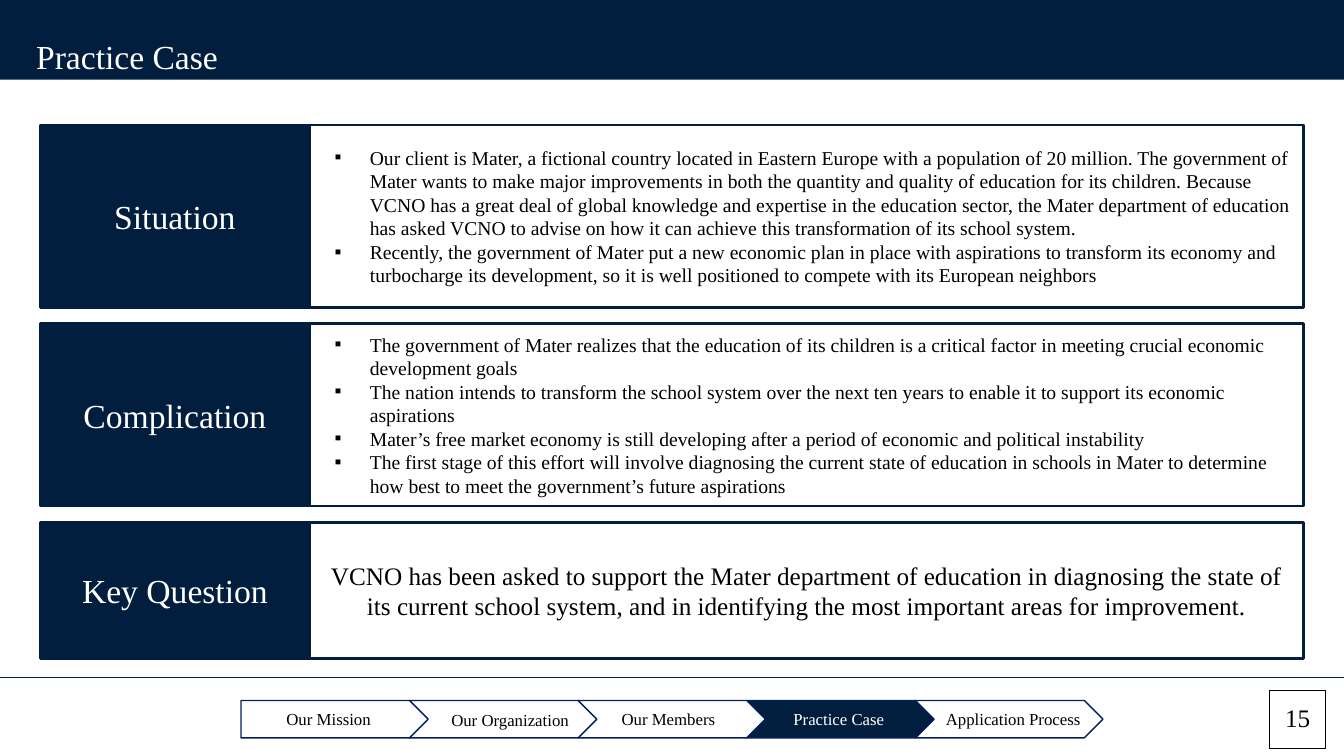
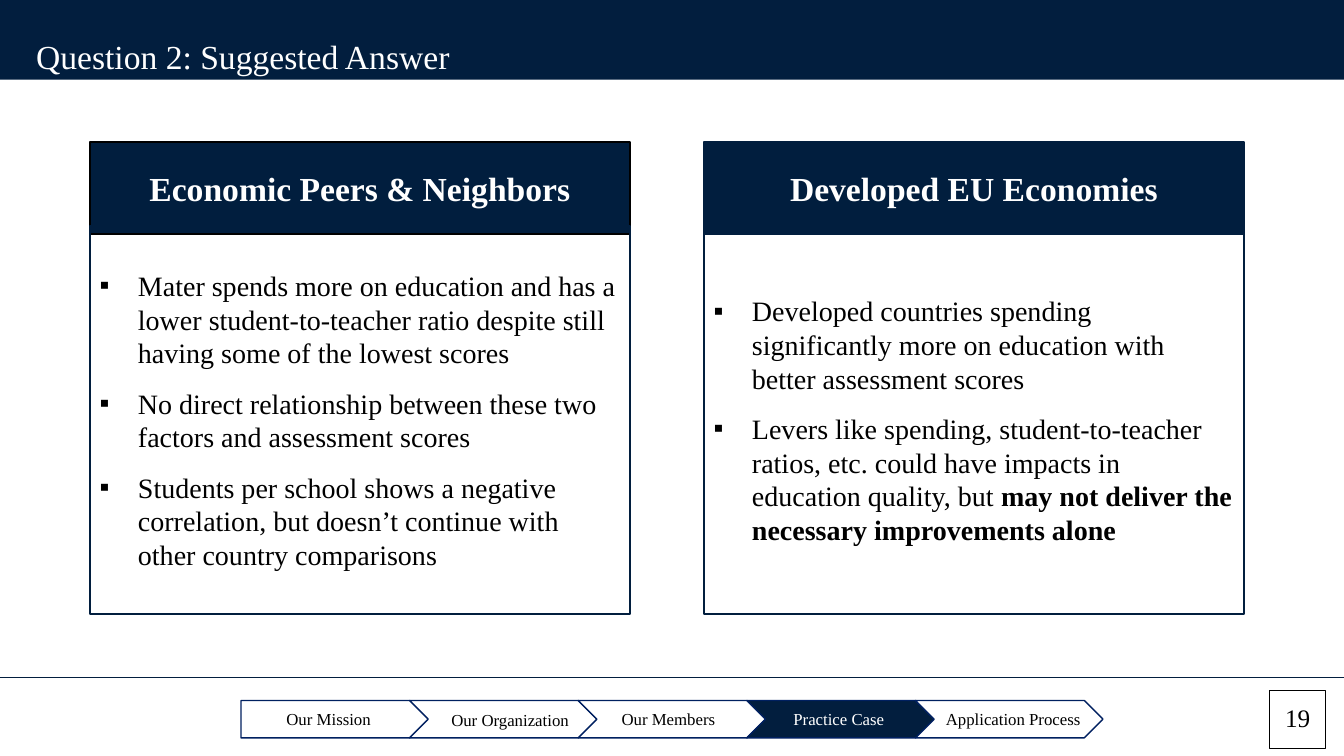
from dataclasses import dataclass

import lxml.etree
import pptx
import pptx.dml.color
import pptx.enum.shapes
import pptx.enum.text
import pptx.oxml.ns
import pptx.util

Inches = pptx.util.Inches
ShapeKind = pptx.enum.shapes.MSO_SHAPE
Align = pptx.enum.text.PP_ALIGN
Anchor = pptx.enum.text.MSO_ANCHOR

FONT = "Times New Roman"
BAND = "021E3E"
PANEL = "011E3E"
STEP_LINE = "002060"
WHITE = "FFFFFF"
BLACK = "000000"
SLIDE_WIDTH = 13.33
ACTIVE_STEP = "Practice Case"


@dataclass(frozen=True)
class Box:
    left: float
    top: float
    width: float
    height: float

    def lengths(self) -> tuple:
        return tuple(Inches(value) for value in (self.left, self.top, self.width, self.height))


@dataclass(frozen=True)
class Step:
    label: str
    center: float
    top: float = 7.01


@dataclass(frozen=True)
class CaseRow:
    heading: str
    height: float
    texts: tuple
    bulleted: bool = True


@dataclass(frozen=True)
class Column:
    heading: str
    left: float
    header_line: str
    texts: tuple


STEPS = (
    Step("Our Mission", 3.26),
    Step("Our Organization", 5.06, 7.02),
    Step("Our Members", 6.63),
    Step("Practice Case", 8.32),
    Step("Application Process", 10.05),
)

CASE_ROWS = (
    CaseRow("Situation", 1.81, (
        "Our client is Mater, a fictional country located in Eastern Europe with a population of 20 million. "
        "The government of Mater wants to make major improvements in both the quantity and quality of education "
        "for its children. Because VCNO has a great deal of global knowledge and expertise in the education "
        "sector, the Mater department of education has asked VCNO to advise on how it can achieve this "
        "transformation of its school system.",
        "Recently, the government of Mater put a new economic plan in place with aspirations to transform its "
        "economy and turbocharge its development, so it is well positioned to compete with its European neighbors",
    )),
    CaseRow("Complication", 1.81, (
        "The government of Mater realizes that the education of its children is a critical factor in meeting "
        "crucial economic development goals",
        "The nation intends to transform the school system over the next ten years to enable it to support its "
        "economic aspirations",
        "Mater’s free market economy is still developing after a period of economic and political instability",
        "The first stage of this effort will involve diagnosing the current state of education in schools in "
        "Mater to determine how best to meet the government’s future aspirations",
    )),
    CaseRow("Key Question", 1.35, (
        "VCNO has been asked to support the Mater department of education in diagnosing the state of its current "
        "school system, and in identifying the most important areas for improvement.",
    ), bulleted=False),
)

COLUMNS = (
    Column("Economic Peers & Neighbors", 0.89, BLACK, (
        "Mater spends more on education and has a lower student-to-teacher ratio despite still having some of "
        "the lowest scores",
        "No direct relationship between these two factors and assessment scores",
        "Students per school shows a negative correlation, but doesn’t continue with other country comparisons",
    )),
    Column("Developed EU Economies", 6.98, PANEL, (
        "Developed countries spending significantly more on education with better assessment scores",
        ("Levers like spending, student-to-teacher ratios, etc. could have impacts in education quality, but ",
         "may not deliver the necessary improvements alone"),
    )),
)


def color(value: str) -> pptx.dml.color.RGBColor:
    return pptx.dml.color.RGBColor.from_string(value)


def add_bullet(paragraph, indent: float, hanging: float) -> None:
    properties = paragraph._p.get_or_add_pPr()
    properties.set("marL", str(Inches(indent)))
    properties.set("indent", str(-Inches(hanging)))
    qualified = pptx.oxml.ns.qn
    bullet_color = lxml.etree.SubElement(properties, qualified("a:buClr"))
    lxml.etree.SubElement(bullet_color, qualified("a:srgbClr")).set("val", BLACK)
    lxml.etree.SubElement(properties, qualified("a:buFont")).set("typeface", FONT)
    lxml.etree.SubElement(properties, qualified("a:buChar")).set("char", "▪")


def write_text(shape, *texts, size: float, font_color: str = BLACK, bold: bool = False,
               align=Align.CENTER, anchor=Anchor.MIDDLE, spacing: float = 1.0,
               space_before: float = 0, bullet: tuple | None = None) -> None:
    """Write one paragraph per text; in a pair, the second part is bold."""
    frame = shape.text_frame
    frame.word_wrap = True
    frame.vertical_anchor = anchor
    for index, text in enumerate(texts):
        paragraph = frame.add_paragraph() if index else frame.paragraphs[0]
        paragraph.alignment = align
        paragraph.line_spacing = spacing
        if index and space_before:
            paragraph.space_before = pptx.util.Pt(space_before)
        if bullet:
            add_bullet(paragraph, *bullet)
        parts = (text,) if isinstance(text, str) else text
        for part_index, part in enumerate(parts):
            run = paragraph.add_run()
            run.text = part
            run.font.name = FONT
            run.font.size = pptx.util.Pt(size)
            run.font.bold = bold or part_index > 0
            run.font.color.rgb = color(font_color)


def add_shape(slide, box: Box, kind=ShapeKind.RECTANGLE, fill: str | None = None,
              line: str | None = None, line_width: float = 1):
    shape = slide.shapes.add_shape(kind, *box.lengths())
    shape.shadow.inherit = False
    if fill:
        shape.fill.solid()
        shape.fill.fore_color.rgb = color(fill)
    else:
        shape.fill.background()
    if line:
        shape.line.color.rgb = color(line)
        shape.line.width = pptx.util.Pt(line_width)
    else:
        shape.line.fill.background()
    return shape


def add_label(slide, box: Box, text: str, **text_format) -> None:
    write_text(slide.shapes.add_textbox(*box.lengths()), text, **text_format)


def add_rule(slide, top: float) -> None:
    rule = slide.shapes.add_connector(pptx.enum.shapes.MSO_CONNECTOR.STRAIGHT,
                                      0, Inches(top), Inches(SLIDE_WIDTH), Inches(top))
    rule.line.color.rgb = color(BAND)
    rule.line.width = pptx.util.Pt(1)
    lxml.etree.SubElement(rule._element.spPr, pptx.oxml.ns.qn("a:effectLst"))


def add_navigation(slide) -> None:
    for index, step in enumerate(STEPS):
        kind = ShapeKind.CHEVRON if index else ShapeKind.PENTAGON
        fill = BAND if step.label == ACTIVE_STEP else WHITE
        add_shape(slide, Box(2.39 + 1.6725 * index, 6.95, 1.86, 0.37), kind, fill, STEP_LINE)
    for step in STEPS:
        font_color = WHITE if step.label == ACTIVE_STEP else BLACK
        add_label(slide, Box(step.center - 0.85, step.top, 1.7, 0.27), step.label,
                  size=12, font_color=font_color, spacing=0.8)


def add_base_slide(presentation, title: str, number: int):
    slide = presentation.slides.add_slide(presentation.slide_layouts[6])
    add_shape(slide, Box(0, 0, SLIDE_WIDTH, 0.79), fill=BAND)
    add_label(slide, Box(0.26, 0.35, 9.39, 0.48), title, size=24, font_color=WHITE,
              align=Align.LEFT, anchor=Anchor.TOP, spacing=0.9)
    add_rule(slide, 6.72)
    add_navigation(slide)
    number_box = add_shape(slide, Box(12.59, 6.85, 0.56, 0.58), line=BLACK, line_width=0.75)
    write_text(number_box, str(number), size=18, spacing=0.9)
    return slide


def add_case_rows(slide) -> None:
    top = 1.24
    for row in CASE_ROWS:
        heading = add_shape(slide, Box(0.4, top, 2.67, row.height), fill=PANEL, line=PANEL, line_width=2)
        write_text(heading, row.heading, size=24, font_color=WHITE)
        body = add_shape(slide, Box(3.07, top, 9.86, row.height), line=PANEL, line_width=2)
        if row.bulleted:
            write_text(body, *row.texts, size=14, align=Align.LEFT, bullet=(0.5, 0.35))
        else:
            write_text(body, *row.texts, size=18)
        top += row.height + 0.16


def add_columns(slide) -> None:
    for column in COLUMNS:
        header = add_shape(slide, Box(column.left, 1.41, 5.36, 0.91), fill=PANEL,
                           line=column.header_line, line_width=1.5)
        write_text(header, column.heading, size=24, font_color=WHITE, bold=True)
        body = add_shape(slide, Box(column.left, 2.24, 5.36, 3.85), line=PANEL, line_width=1.5)
        write_text(body, *column.texts, size=20, align=Align.LEFT, space_before=12, bullet=(0.38, 0.38))


def main() -> None:
    presentation = pptx.Presentation()
    presentation.slide_width = Inches(SLIDE_WIDTH)
    presentation.slide_height = Inches(7.5)
    add_case_rows(add_base_slide(presentation, "Practice Case", 15))
    add_columns(add_base_slide(presentation, "Question 2: Suggested Answer", 19))
    presentation.save("out.pptx")


if __name__ == "__main__":
    main()
